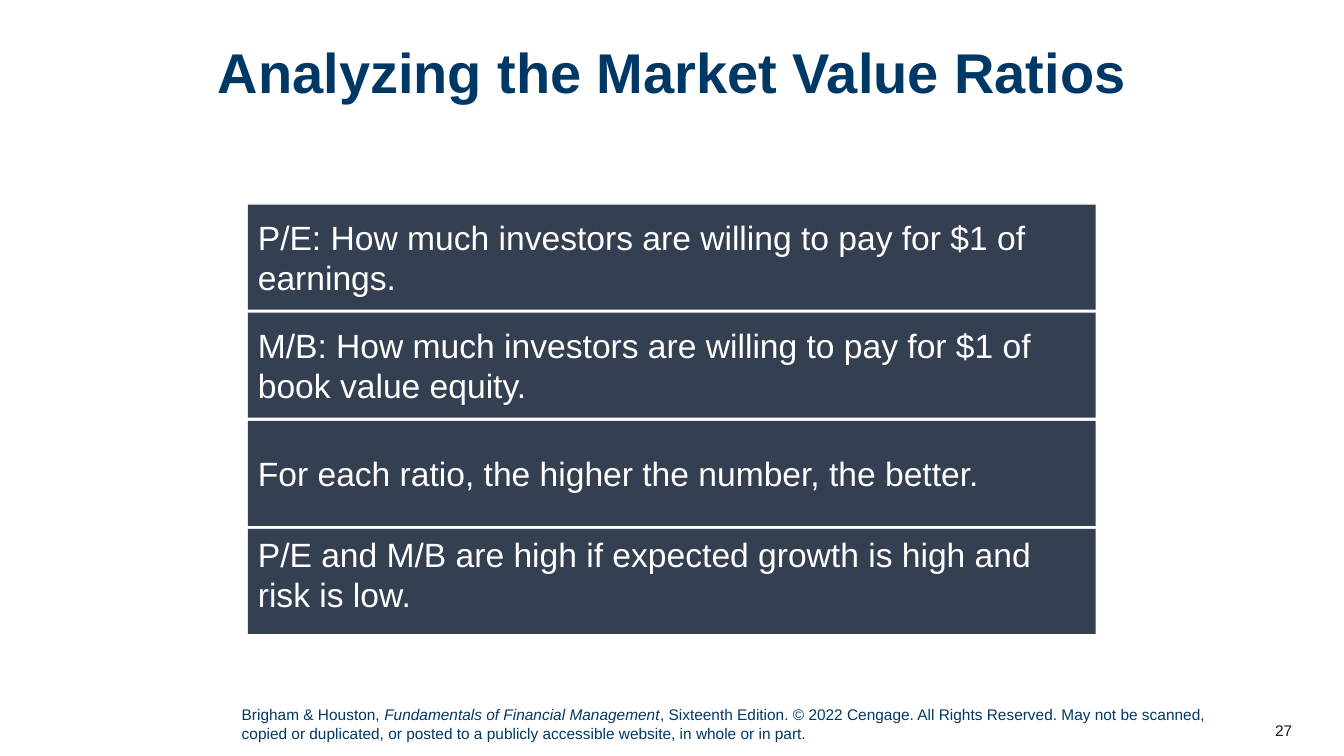
from pptx import Presentation
from pptx import util as u
from pptx.dml import color
from pptx.enum import shapes, text

COLORS = {"navy": "003865", "slate": "343F52", "white": "FFFFFF", "black": "181717"}

prs = Presentation()
prs.slide_width = u.Pt(960)
prs.slide_height = u.Pt(540)
s = prs.slides.add_slide(prs.slide_layouts[6])


def add_run(p, content, size, color_name, bold=False, italic=False):
    r = p.add_run()
    r.text = content
    r.font.name = "Arial"
    r.font.size = u.Pt(size)
    r.font.bold = bold
    r.font.italic = italic
    r.font.color.rgb = color.RGBColor.from_string(COLORS[color_name])


def add_text(left, top, width, height, align, anchor=text.MSO_ANCHOR.TOP):
    sp = s.shapes.add_textbox(u.Pt(left), u.Pt(top), u.Pt(width), u.Pt(height))
    tf = sp.text_frame
    tf.word_wrap = True
    tf.vertical_anchor = anchor
    p = tf.paragraphs[0]
    p.alignment = align
    return p


p = add_text(872.6, 507.6, 57.6, 28.8, text.PP_ALIGN.RIGHT, text.MSO_ANCHOR.MIDDLE)
add_run(p, "27", 11, "black")

p = add_text(165.6, 500.4, 705.6, 33.8, text.PP_ALIGN.LEFT)
add_run(p, "Brigham & Houston, ", 11, "navy")
add_run(p, "Fundamentals of Financial Management", 11, "navy", italic=True)
add_run(p, ", Sixteenth Edition. © 2022 Cengage. All Rights Reserved. May not be scanned, "
        "copied or duplicated, or posted to a publicly accessible website, in whole or in part.",
        11, "navy")

p = add_text(37.4, 28.8, 884.9, 95.8, text.PP_ALIGN.CENTER)
p.line_spacing = 0.9
add_run(p, "Analyzing the Market Value Ratios", 40, "navy", bold=True)

points = [
    ("P/E: How much investors are willing to pay for $1 of earnings.", text.MSO_ANCHOR.MIDDLE),
    ("M/B: How much investors are willing to pay for $1 of book value equity.", text.MSO_ANCHOR.MIDDLE),
    ("For each ratio, the higher the number, the better.", text.MSO_ANCHOR.MIDDLE),
    ("P/E and M/B are high if expected growth is high and risk is low.", text.MSO_ANCHOR.TOP),
]
for i, (point, anchor) in enumerate(points):
    sp = s.shapes.add_shape(shapes.MSO_SHAPE.RECTANGLE, u.Pt(177.1), u.Pt(146.2 + i * 77.2),
                            u.Pt(605.5), u.Pt(75))
    sp.shadow.inherit = False
    sp.fill.solid()
    sp.fill.fore_color.rgb = color.RGBColor.from_string(COLORS["slate"])
    sp.line.fill.background()
    tf = sp.text_frame
    tf.word_wrap = True
    tf.vertical_anchor = anchor
    p = tf.paragraphs[0]
    p.alignment = text.PP_ALIGN.LEFT
    add_run(p, point, 24, "white")

prs.save("out.pptx")
